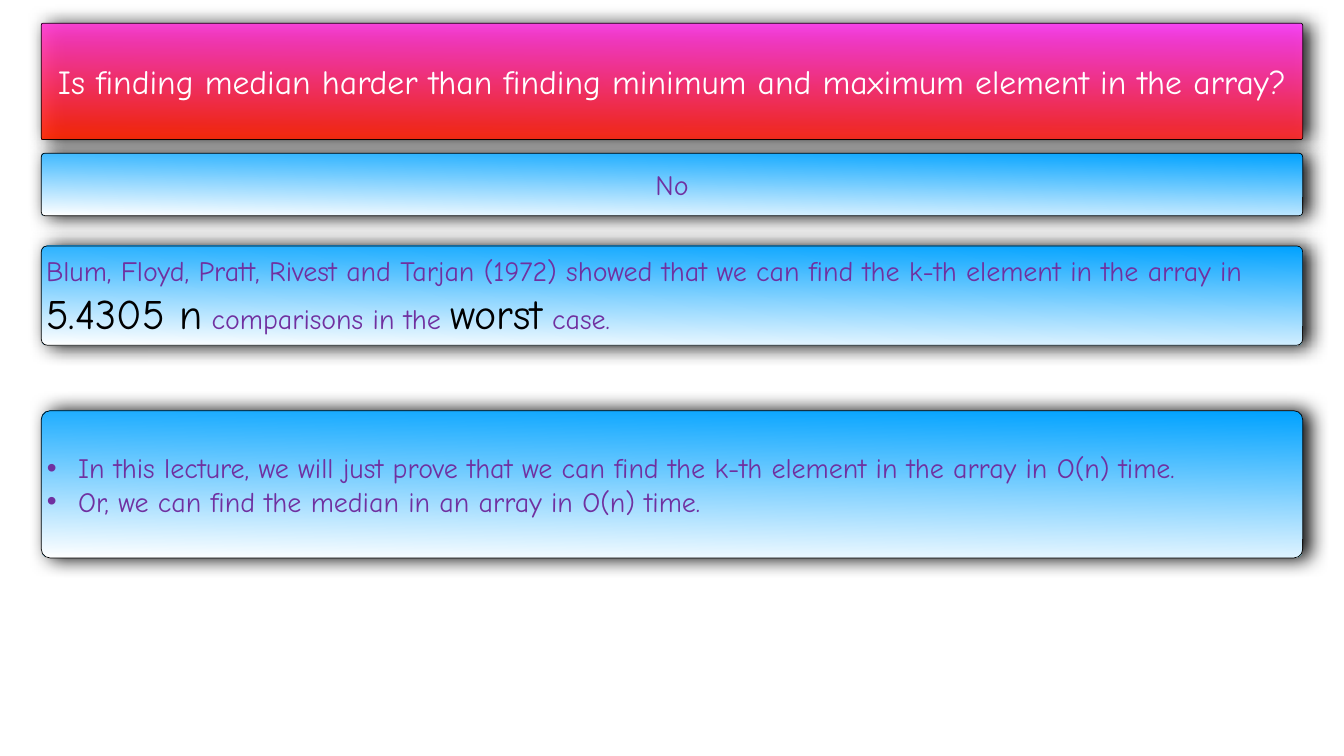
"""Build a slide on the difficulty of finding the median of an array."""
import pptx
import pptx.dml.color
import pptx.enum.shapes
import pptx.enum.text
import pptx.oxml.ns
import pptx.oxml.xmlchemy
import pptx.util
from lxml import etree
from pptx.util import Inches

FONT = "Comic Neue"
PURPLE, BLACK, WHITE = "7030A0", "000000", "FFFFFF"
BLUE_FADE = ("00A2FF", WHITE)
PINK_FADE = ("FF40FF", "FF2600")
CENTER = pptx.enum.text.PP_ALIGN.CENTER
LEFT = pptx.enum.text.PP_ALIGN.LEFT


def color(hex_string):
    """Turn a hex string into a colour."""
    return pptx.dml.color.RGBColor.from_string(hex_string)


def add_element(parent, tag, **attributes):
    """Append a drawing element to a parent."""
    values = {name: str(value) for name, value in attributes.items()}
    return etree.SubElement(parent, pptx.oxml.ns.qn(tag), values)


def set_opacity(element, percent):
    """Make every plain colour inside an element partly transparent."""
    for item in element.iter(pptx.oxml.ns.qn("a:srgbClr")):
        add_element(item, "a:alpha", val=percent * 1000)


def add_shadow(shape):
    """Give a shape a soft black shadow to its right."""
    shape.shadow.inherit = False
    effects = shape._element.spPr.find(pptx.oxml.ns.qn("a:effectLst"))
    shadow = add_element(effects, "a:outerShdw", blurRad=pptx.util.Pt(28),
                         dist=pptx.util.Pt(9), dir=0, algn="ctr", rotWithShape=0)
    add_element(shadow, "a:srgbClr", val=BLACK)
    set_opacity(shadow, 97)


def add_panel(slide, top, height, fade, rounding=0.059, opacity=100):
    """Add a full-width gradient panel and return its text frame."""
    shape = slide.shapes.add_shape(
        pptx.enum.shapes.MSO_SHAPE.ROUNDED_RECTANGLE,
        Inches(0.82), Inches(top), Inches(25.03), Inches(height))
    shape.adjustments[0] = rounding
    shape.fill.gradient()
    shape.fill.gradient_angle = 269
    for stop, hex_string, position in zip(shape.fill.gradient_stops, fade, (0, 1)):
        stop.color.rgb = color(hex_string)
        stop.position = position
    shape.line.color.rgb = color(BLACK)
    shape.line.width = pptx.util.Pt(1)
    if opacity < 100:
        set_opacity(shape._element.spPr, opacity)
    add_shadow(shape)
    frame = shape.text_frame
    frame.word_wrap = True
    frame.vertical_anchor = pptx.enum.text.MSO_ANCHOR.MIDDLE
    frame.margin_left = frame.margin_right = Inches(0.06)
    frame.margin_top = frame.margin_bottom = Inches(0.06)
    return frame


def set_font(font, size, hex_string):
    """Set the typeface, size and colour of a font."""
    font.name = FONT
    font.size = pptx.util.Pt(size)
    font.color.rgb = color(hex_string)


def write_line(paragraph, text, align, size=40, hex_string=PURPLE):
    """Fill a paragraph with evenly styled text."""
    paragraph.text = text
    paragraph.alignment = align
    set_font(paragraph.font, size, hex_string)


def write_emphasis(paragraph, parts):
    """Fill a paragraph with parts, every second one large and black."""
    paragraph.alignment = LEFT
    for index, text in enumerate(parts):
        run = paragraph.add_run()
        run.text = text
        set_font(run.font, *((60, BLACK) if index % 2 else (40, PURPLE)))


def write_bullets(frame, lines):
    """Fill a text frame with bulleted lines."""
    for index, text in enumerate(lines):
        paragraph = frame.add_paragraph() if index else frame.paragraphs[0]
        properties = paragraph._p.get_or_add_pPr()
        properties.set("marL", str(Inches(0.62)))
        properties.set("indent", str(Inches(-0.62)))
        add_element(properties, "a:buFont", typeface="Arial")
        add_element(properties, "a:buChar", char="•")
        write_line(paragraph, text, LEFT)


def main():
    """Build and save the slide."""
    presentation = pptx.Presentation()
    presentation.slide_width = Inches(26.67)
    presentation.slide_height = Inches(15)
    slide = presentation.slides.add_slide(presentation.slide_layouts[6])

    question = add_panel(slide, 0.46, 2.31, PINK_FADE, rounding=0.017, opacity=93)
    write_line(question.paragraphs[0],
               "Is finding median harder than finding minimum and maximum element in the array?",
               CENTER, 48, WHITE)

    answer = add_panel(slide, 3.04, 1.24, BLUE_FADE)
    write_line(answer.paragraphs[0], "No", CENTER)

    result = add_panel(slide, 4.88, 1.97, BLUE_FADE)
    write_emphasis(result.paragraphs[0], [
        "Blum, Floyd, Pratt, Rivest and Tarjan (1972) showed that we can find "
        "the k-th element in the array in ",
        "5.4305 n", " comparisons in the ", "worst", " case."])

    plan = add_panel(slide, 8.15, 2.92, BLUE_FADE)
    write_bullets(plan, [
        "In this lecture, we will just prove that we can find the k-th element "
        "in the array in O(n) time.",
        "Or, we can find the median in an array in O(n) time."])

    presentation.save("out.pptx")


if __name__ == "__main__":
    main()
